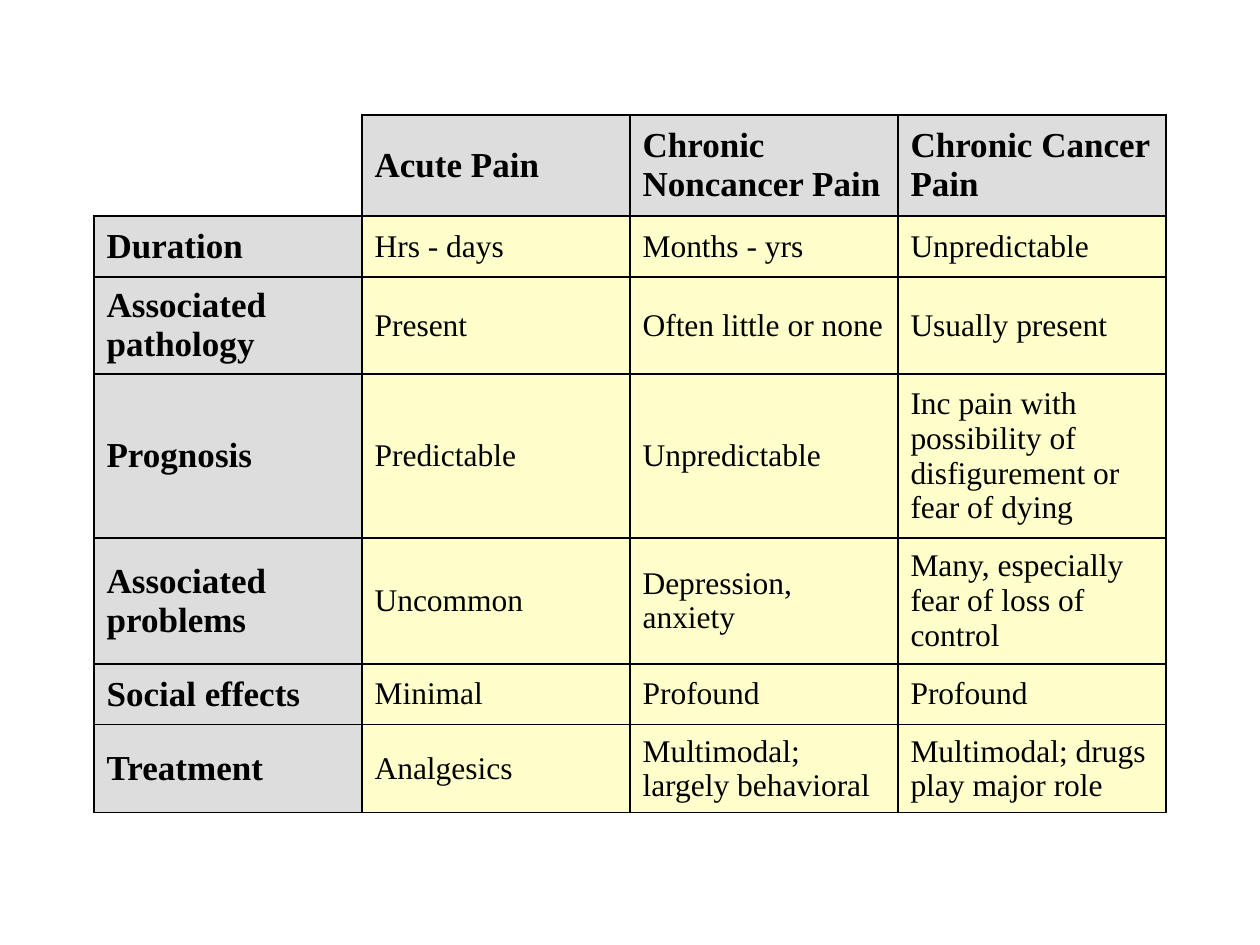
from dataclasses import dataclass

from lxml import etree
from pptx import Presentation
from pptx.dml.color import RGBColor
from pptx.enum.text import MSO_ANCHOR
from pptx.oxml.ns import qn
from pptx.util import Pt

PX = 914400 // 126
MID = MSO_ANCHOR.MIDDLE
FONT = "Times New Roman"
COLORS = {"ink": "000000", "head": "DDDDDD", "body": "FFFFCC"}
LEFT, TOP, WIDTH = 94, 115, 268
EDGES = ("L", "R", "T", "B")


@dataclass(frozen=True)
class Row:
    height: int
    texts: tuple[str, ...]


ROWS = (
    Row(101, ("", "Acute Pain", "Chronic Noncancer Pain", "Chronic Cancer Pain")),
    Row(61, ("Duration", "Hrs - days", "Months - yrs", "Unpredictable")),
    Row(97, ("Associated pathology", "Present", "Often little or none",
             "Usually present")),
    Row(164, ("Prognosis", "Predictable", "Unpredictable",
              "Inc pain with possibility of disfigurement or fear of dying")),
    Row(126, ("Associated problems", "Uncommon", "Depression, anxiety",
              "Many, especially fear of loss of control")),
    Row(61, ("Social effects", "Minimal", "Profound", "Profound")),
    Row(88, ("Treatment", "Analgesics", "Multimodal; largely behavioral",
             "Multimodal; drugs play major role")),
)


def write(cell, text: str, *, size: int, bold: bool, color: str = "ink") -> None:
    cell.vertical_anchor = MID
    para = cell.text_frame.paragraphs[0]
    gap = etree.SubElement(para._p.get_or_add_pPr(), qn("a:spcBef"))
    etree.SubElement(gap, qn("a:spcPct"), val="20000")
    run = para.add_run()
    run.text = text
    font = run.font
    font.name, font.size, font.bold = FONT, Pt(size), bold
    font.color.rgb = RGBColor.from_string(COLORS[color])


def rule(cell, shown: str) -> None:
    """Draw the edges named in shown and clear the others."""
    props = cell._tc.get_or_add_tcPr()
    for spot, edge in enumerate(EDGES):
        line = etree.Element(qn(f"a:ln{edge}"), w=str(Pt(1)))
        if edge in shown:
            fill = etree.SubElement(line, qn("a:solidFill"))
            etree.SubElement(fill, qn("a:srgbClr"), val=COLORS["ink"])
        else:
            etree.SubElement(line, qn("a:noFill"))
        props.insert(spot, line)


def draw(cell, text: str, head: bool) -> None:
    if text:
        write(cell, text, size=20 if head else 18, bold=head)
        cell.fill.solid()
        tint = COLORS["head" if head else "body"]
        cell.fill.fore_color.rgb = RGBColor.from_string(tint)
        rule(cell, "LRTB")
    else:
        cell.fill.background()
        rule(cell, "RB")


def main() -> None:
    deck = Presentation()
    deck.slide_width, deck.slide_height = 1260 * PX, 945 * PX
    slide = deck.slides.add_slide(deck.slide_layouts[6])
    count = len(ROWS[0].texts)
    high = sum(row.height for row in ROWS)
    table = slide.shapes.add_table(
        len(ROWS), count, LEFT * PX, TOP * PX, count * WIDTH * PX, high * PX
    ).table
    table.first_row = table.horz_banding = False
    for col in table.columns:
        col.width = WIDTH * PX
    for i, row in enumerate(ROWS):
        table.rows[i].height = row.height * PX
        for j, text in enumerate(row.texts):
            draw(table.cell(i, j), text, head=i == 0 or j == 0)
    deck.save("out.pptx")


if __name__ == "__main__":
    main()
